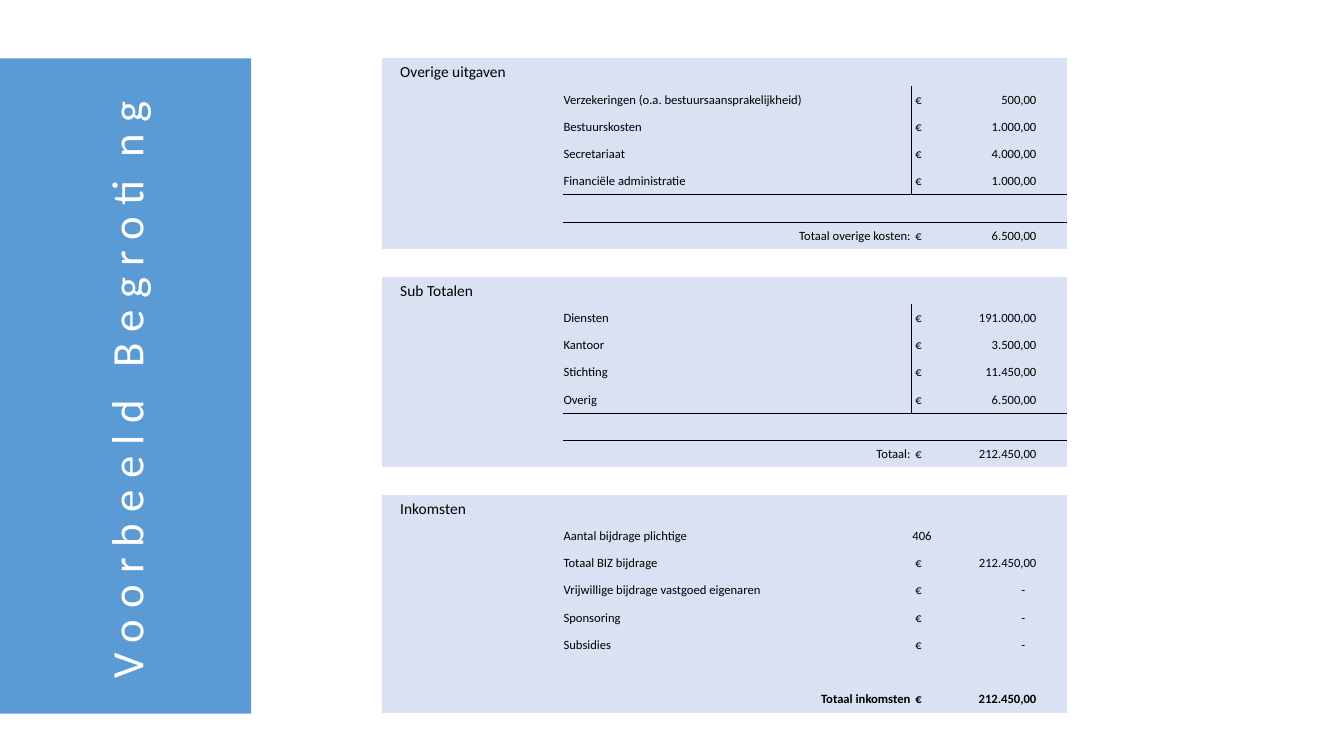
from lxml.etree import SubElement
from pptx import Presentation
from pptx.dml.color import RGBColor
from pptx.enum.shapes import MSO_SHAPE
from pptx.enum.text import MSO_ANCHOR, MSO_AUTO_SIZE, PP_ALIGN
from pptx.oxml.ns import qn
from pptx.util import Inches, Pt

BLUE = RGBColor(0x5B, 0x9B, 0xD5)
PALE = RGBColor(0xD9, 0xE1, 0xF2)
WHITE = RGBColor(0xFF, 0xFF, 0xFF)
BLACK = RGBColor(0, 0, 0)
FONT = "Calibri"
NO_STYLE = "{2D5ABB26-0587-4C30-8999-92F81FD0307C}"

TOP, HEIGHT = 0.58, 6.5
COLS = [0.17, 1.62, 3.46, 1.54]
AMOUNT_STOP, DASH_STOP = 1.2, 1.09

BLOCKS = [
    ("Overige uitgaven",
     [("Verzekeringen (o.a. bestuursaansprakelijkheid)", "€\t500,00"),
      ("Bestuurskosten", "€\t1.000,00"),
      ("Secretariaat", "€\t4.000,00"),
      ("Financiële administratie", "€\t1.000,00")],
     ("Totaal overige kosten:", "€\t6.500,00"), True),
    ("Sub Totalen",
     [("Diensten", "€\t191.000,00"),
      ("Kantoor", "€\t3.500,00"),
      ("Stichting", "€\t11.450,00"),
      ("Overig", "€\t6.500,00")],
     ("Totaal:", "€\t212.450,00"), True),
    ("Inkomsten",
     [("Aantal bijdrage plichtige", "406"),
      ("Totaal BIZ bijdrage", "€\t212.450,00"),
      ("Vrijwillige bijdrage vastgoed eigenaren", "€\t-"),
      ("Sponsoring", "€\t-"),
      ("Subsidies", "€\t-")],
     ("Totaal inkomsten", "€\t212.450,00"), False),
]


def add_text(p, text, size=9, color=BLACK, bold=False, align=PP_ALIGN.LEFT):
    p.alignment = align
    r = p.add_run()
    r.text = text
    r.font.name, r.font.size, r.font.bold = FONT, Pt(size), bold
    r.font.color.rgb = color
    return r


def add_tab_stop(p, inches):
    tabs = SubElement(p._p.get_or_add_pPr(), qn("a:tabLst"))
    SubElement(tabs, qn("a:tab"), pos=str(Inches(inches)), algn="r")


def add_borders(cell, sides):
    tc_pr = cell._tc.get_or_add_tcPr()
    for side in "LRTB":
        if side in sides:
            ln = SubElement(tc_pr, qn("a:ln" + side), w=str(Pt(0.5)))
            fill = SubElement(ln, qn("a:solidFill"))
            SubElement(fill, qn("a:srgbClr"), val=str(BLACK))


def format_cell(cell, text="", fill=PALE, sides="", **fmt):
    add_borders(cell, sides)
    cell.fill.solid()
    cell.fill.fore_color.rgb = fill
    cell.vertical_anchor = MSO_ANCHOR.MIDDLE
    is_amount = text.startswith("€")
    cell.margin_left = Inches(0.04 if is_amount else 0.01)
    cell.margin_right = cell.margin_top = Inches(0.01)
    cell.margin_bottom = 0
    p = cell.text_frame.paragraphs[0]
    if not text:
        SubElement(p._p, qn("a:endParaRPr"), sz="900")
        return
    add_text(p, text, **fmt)
    if is_amount:
        add_tab_stop(p, DASH_STOP if text.endswith("-") else AMOUNT_STOP)


def budget_rows():
    rows = []
    for heading, items, total, ruled in BLOCKS:
        if rows:
            rows.append([{"fill": WHITE}] * 4)
        rows.append([{}, {"text": heading, "size": 11}, {}, {}])
        for i, (label, amount) in enumerate(items):
            below = "B" if i == len(items) - 1 else ""
            left, right = ("R" + below, "L" + below) if ruled else ("", "")
            rows.append([{}, {}, {"text": label, "sides": left},
                         {"text": amount, "sides": right}])
        rows.append([{}, {}] + [{"sides": "T" if ruled else ""}] * 2)
        bold = not ruled
        rows.append([{}, {}, {"text": total[0], "bold": bold, "align": PP_ALIGN.RIGHT},
                     {"text": total[1], "bold": bold}])
    return rows


def add_budget(s, x, y, h):
    rows = budget_rows()
    table = s.shapes.add_table(len(rows), len(COLS), Inches(x), Inches(y),
                               Inches(sum(COLS)), Inches(h)).table
    table.first_row = table.horz_banding = False
    table._tbl.tblPr.find(qn("a:tableStyleId")).text = NO_STYLE
    for column, width in zip(table.columns, COLS):
        column.width = Inches(width)
    for i, row in enumerate(rows):
        table.rows[i].height = Inches(h / len(rows))
        for j, options in enumerate(row):
            format_cell(table.cell(i, j), **options)


def add_title_band(s, x, y, w, h):
    band = s.shapes.add_shape(MSO_SHAPE.RECTANGLE, Inches(x), Inches(y), Inches(w), Inches(h))
    band.shadow.inherit = False
    band.fill.solid()
    band.fill.fore_color.rgb = BLUE
    band.line.fill.background()

    title = s.shapes.title
    band._element.addnext(title._element)
    length, depth = 6.14, 0.64
    title.left, title.top = Inches(x + (w - length) / 2), Inches(y + (h - depth) / 2 + 0.04)
    title.width, title.height = Inches(length), Inches(depth)
    title.rotation = 270
    tf = title.text_frame
    tf.auto_size = MSO_AUTO_SIZE.NONE
    tf.word_wrap = True
    tf.vertical_anchor = MSO_ANCHOR.MIDDLE
    tf.margin_left = tf.margin_right = 0
    r = add_text(tf.paragraphs[0], "Voorbeeld Begroting", size=32, color=WHITE,
                 align=PP_ALIGN.CENTER)
    r.font._element.set("spc", "800")


def main():
    prs = Presentation()
    prs.slide_width, prs.slide_height = Inches(13.33), Inches(7.5)
    s = prs.slides.add_slide(prs.slide_layouts[5])
    add_title_band(s, 0, TOP, 2.49, HEIGHT)
    add_budget(s, 3.79, TOP, HEIGHT)
    prs.save("out.pptx")


if __name__ == "__main__":
    main()
